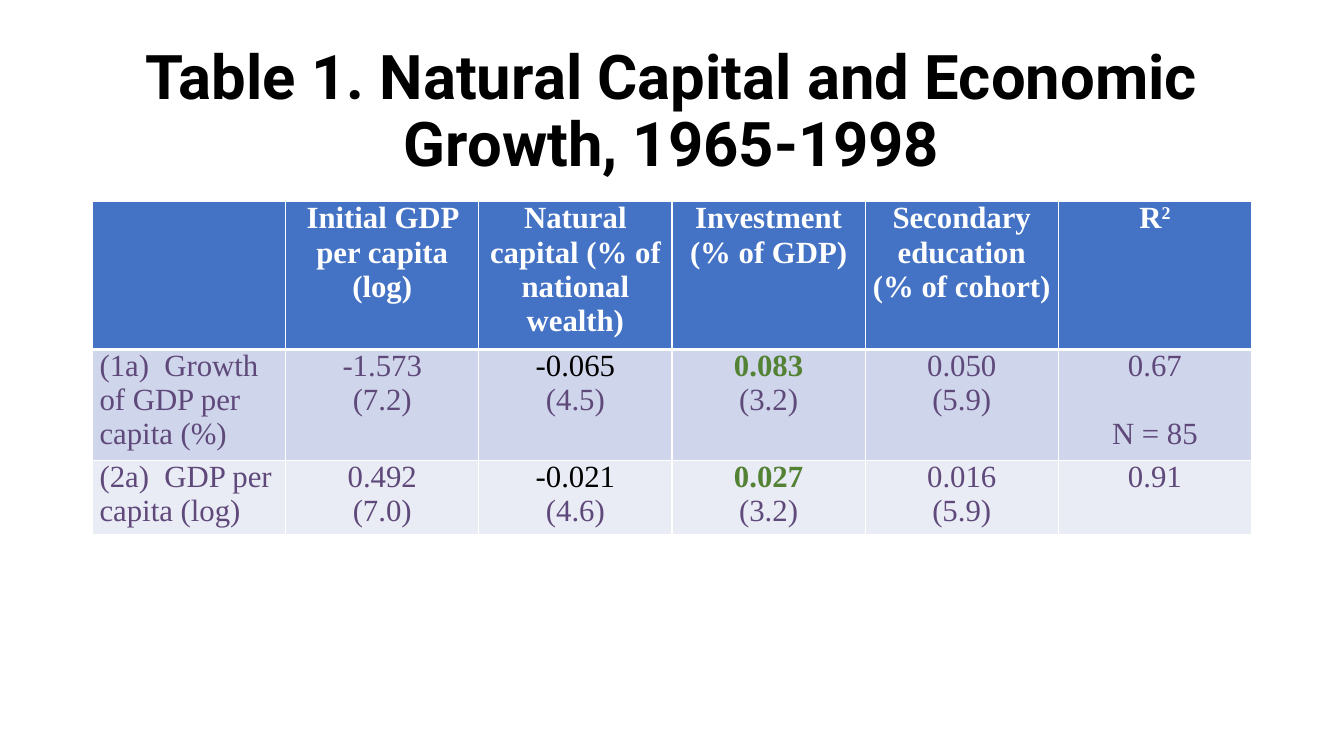
from lxml.etree import SubElement
from pptx import Presentation
from pptx.dml.color import RGBColor
from pptx.enum.text import MSO_ANCHOR as Anchor, PP_ALIGN as Align
from pptx.oxml.ns import qn
from pptx.util import Cm, Pt

WHITE, BLACK, PURPLE, GREEN = "FFFFFF", "000000", "5F497A", "548235"
HEADER_FILL, BAND_FILLS = "4472C4", ("CFD5EA", "E9EBF5")
LEFT, WIDTH = 2.33, 29.21

HEADERS = [
    [],
    ["Initial GDP per capita (log)"],
    ["Natural capital (% of national wealth)"],
    ["Investment (% of GDP)"],
    ["Secondary education", "(% of cohort)"],
    ["R"],
]
# Label, (coefficient, t-statistic) pairs, R squared and sample size
RESULTS = [
    ("(1a)  Growth of GDP per capita (%)",
     [("-1.573", "(7.2)"), ("-0.065", "(4.5)"), ("0.083", "(3.2)"), ("0.050", "(5.9)")],
     ["0.67", "N = 85"]),
    ("(2a)  GDP per capita (log)",
     [("0.492", "(7.0)"), ("-0.021", "(4.6)"), ("0.027", "(3.2)"), ("0.016", "(5.9)")],
     ["0.91"]),
]
COEFFICIENT_STYLES = [(PURPLE, False), (BLACK, False), (GREEN, True), (PURPLE, False)]
ROW_HEIGHTS = [3.42, 2.58, 1.72]


def color(value):
    return RGBColor.from_string(value)


class SlideBuilder:
    title_font, table_font = "Roboto", "Times New Roman"
    title_size, table_size = 44, 22

    def __init__(self, deck):
        self.page = deck.slides.add_slide(deck.slide_layouts[6])

    def add_span(self, para, text, font, size, ink, bold=False):
        span = para.add_run()
        span.text = text
        span.font.name, span.font.size = font, Pt(size)
        span.font.bold = bold
        span.font.color.rgb = color(ink)
        return span

    def title(self, text, left, top, width, height):
        box = self.page.shapes.add_textbox(Cm(left), Cm(top), Cm(width), Cm(height))
        frame = box.text_frame
        frame.word_wrap = True
        frame.vertical_anchor = Anchor.MIDDLE
        para = frame.paragraphs[0]
        para.alignment, para.line_spacing = Align.CENTER, 0.9
        self.add_span(para, text, self.title_font, self.title_size, BLACK, True)

    def table(self, left, top, width, row_heights, column_count):
        frame = self.page.shapes.add_table(
            len(row_heights), column_count, Cm(left), Cm(top), Cm(width), Cm(sum(row_heights)))
        for row, height in zip(frame.table.rows, row_heights):
            row.height = Cm(height)
        return frame.table

    def cell(self, cell, fill, lines, align=Align.CENTER, bottom_width=1):
        """Fill a cell with lines of (text, colour, bold)."""
        cell.margin_left = cell.margin_right = Cm(0.18)
        cell.margin_top = cell.margin_bottom = 0
        self.borders(cell, bottom_width)
        cell.fill.solid()
        cell.fill.fore_color.rgb = color(fill)
        for index, (text, ink, bold) in enumerate(lines):
            frame = cell.text_frame
            para = frame.add_paragraph() if index else frame.paragraphs[0]
            para.alignment = align
            self.add_span(para, text, self.table_font, self.table_size, ink, bold)

    def borders(self, cell, bottom_width):
        properties = cell._tc.get_or_add_tcPr()
        for side, points in (("lnL", 1), ("lnR", 1), ("lnT", 1), ("lnB", bottom_width)):
            line = SubElement(properties, qn(f"a:{side}"), w=str(Pt(points)))
            SubElement(SubElement(line, qn("a:solidFill")), qn("a:srgbClr"), val=WHITE)


def main():
    deck = Presentation()
    deck.slide_width, deck.slide_height = Cm(33.87), Cm(19.05)
    builder = SlideBuilder(deck)

    # Title
    builder.title("Table 1. Natural Capital and Economic Growth, 1965-1998",
                  LEFT, 1.01, WIDTH, 3.68)

    # Header row
    table = builder.table(LEFT, 5.08, WIDTH, ROW_HEIGHTS, len(HEADERS))
    for column, texts in enumerate(HEADERS):
        builder.cell(table.cell(0, column), HEADER_FILL,
                     [(text, WHITE, True) for text in texts], bottom_width=3)
    r_squared = table.cell(0, len(HEADERS) - 1).text_frame.paragraphs[0]
    exponent = builder.add_span(r_squared, "2", builder.table_font,
                                builder.table_size, WHITE, True)
    exponent.font._element.set("baseline", "30000")

    # Regression results
    for row, ((label, estimates, fit), fill) in enumerate(zip(RESULTS, BAND_FILLS), 1):
        builder.cell(table.cell(row, 0), fill, [(label, PURPLE, False)], Align.LEFT)
        for column, (pair, style) in enumerate(zip(estimates, COEFFICIENT_STYLES), 1):
            coefficient, statistic = pair
            builder.cell(table.cell(row, column), fill,
                         [(coefficient, *style), (statistic, PURPLE, False)])
        fit_cell = table.cell(row, len(HEADERS) - 1)
        builder.cell(fit_cell, fill, [(text, PURPLE, False) for text in fit])
        # Sample size sits one line below R squared
        for para in fit_cell.text_frame.paragraphs[1:]:
            para.space_before = Pt(24.3)

    deck.save("out.pptx")


if __name__ == "__main__":
    main()
